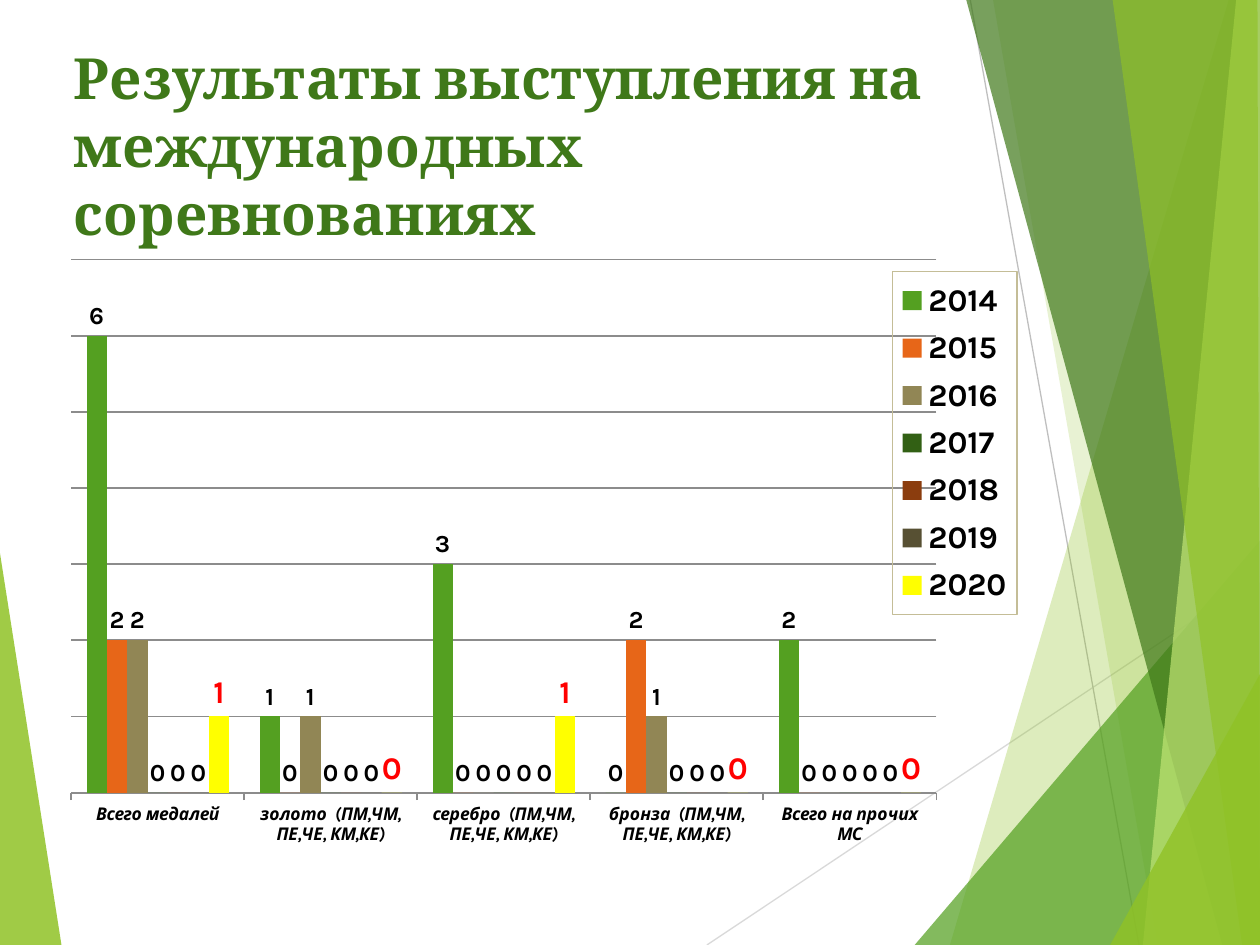
from dataclasses import dataclass

from lxml import etree
from pptx import Presentation
from pptx import util as u
from pptx.chart.data import CategoryChartData
from pptx.dml.color import RGBColor
from pptx.enum import chart as charts
from pptx.enum import shapes, text
from pptx.oxml import parse_xml
from pptx.oxml.ns import nsdecls, qn


@dataclass(frozen=True)
class Theme:
    title_font: str = "Cambria"
    chart_font: str = "Karla"
    title_size: float = 32.4
    legend_size: int = 18
    label_size: int = 14
    category_size: int = 10
    title: str = "3F7819"
    ink: str = "000000"
    highlight: str = "FF0000"
    grid: str = "8C8C8C"
    legend_border: str = "C4BD97"


@dataclass(frozen=True)
class Facet:
    points: tuple
    color: str
    opacity: int


@dataclass(frozen=True)
class Ray:
    start: tuple
    end: tuple
    color: str


@dataclass(frozen=True)
class Year:
    name: str
    medals: tuple
    color: str
    label_color: str = Theme.ink
    label_size: int = Theme.label_size


THEME = Theme()
WIDTH, HEIGHT = 25.4, 19.05
CORNER, TOP_CORNER = (WIDTH, HEIGHT), (WIDTH, 0)

LEFT_FACET = Facet(((0, 11.15), (1.24, HEIGHT), (0, HEIGHT)), "90C226", 85)
RAYS = (
    Ray((14.25, HEIGHT), (WIDTH, 11.61), "D9D9D9"),
    Ray((19.56, 0), (22.96, HEIGHT), "BFBFBF"),
)
RIGHT_FACETS = (
    Facet(((24.77, 0), (19.15, HEIGHT), CORNER, TOP_CORNER), "90C226", 30),
    Facet(((20.02, 0), (23.34, HEIGHT), CORNER, TOP_CORNER), "90C226", 20),
    Facet(((18.44, HEIGHT), (WIDTH, 10.9), CORNER), "54A021", 72),
    Facet(((19.48, 0), (24.64, HEIGHT), CORNER, TOP_CORNER), "3F7819", 70),
    Facet(((24.92, 0), (23.04, HEIGHT), CORNER, TOP_CORNER), "C0E474", 70),
    Facet(((22.43, 0), (25.04, HEIGHT), CORNER, (25.35, 0)), "90C226", 65),
    Facet(((22.38, HEIGHT), (WIDTH, 13.59), CORNER), "90C226", 80),
)

EVENTS = "(ПМ,ЧМ, ПЕ,ЧЕ, КМ,КЕ)"
CATEGORIES = ("Всего медалей", *(f"{medal}  {EVENTS}" for medal in ("золото", "серебро", "бронза")),
              "Всего на прочих МС")
NONE_WON = (0,) * len(CATEGORIES)
YEARS = (
    Year("2014", (6, 1, 3, 0, 2), "54A021"),
    Year("2015", (2, 0, 0, 2, 0), "E76618"),
    Year("2016", (2, 1, 0, 1, 0), "918655"),
    Year("2017", NONE_WON, "326014"),
    Year("2018", NONE_WON, "8B3D0E"),
    Year("2019", NONE_WON, "575033"),
    Year("2020", (1, 0, 1, 0, 0), "FFFF00", THEME.highlight, THEME.legend_size),
)


def style_font(font, color: str, **values) -> None:
    for name, value in values.items():
        setattr(font, name, value)
    font.color.rgb = RGBColor.from_string(color)


def style_line(line, color: str, width: float) -> None:
    line.color.rgb = RGBColor.from_string(color)
    line.width = u.Pt(width)


def draw_facet(slide, facet: Facet) -> None:
    corners = [(u.Cm(x), u.Cm(y)) for x, y in facet.points]
    builder = slide.shapes.build_freeform(*corners[0])
    builder.add_line_segments(corners[1:], close=True)
    shape = builder.convert_to_shape()
    shape.shadow.inherit = False
    shape.line.fill.background()
    shape.fill.solid()
    shape.fill.fore_color.rgb = RGBColor.from_string(facet.color)
    color = next(shape.fill._xPr.iter(qn("a:srgbClr")))
    etree.SubElement(color, qn("a:alpha")).set("val", str(facet.opacity * 1000))


def draw_ray(slide, ray: Ray) -> None:
    connector = slide.shapes.add_connector(
        shapes.MSO_CONNECTOR.STRAIGHT, *(u.Cm(value) for value in ray.start + ray.end))
    style_line(connector.line, ray.color, 0.75)
    etree.SubElement(connector._element.spPr, qn("a:effectLst"))


def add_title(slide) -> None:
    frame = slide.shapes.add_textbox(u.Cm(1.24), u.Cm(0.74), u.Cm(19.25), u.Cm(3.66)).text_frame
    frame.word_wrap = True
    frame.vertical_anchor = text.MSO_ANCHOR.TOP
    run = frame.paragraphs[0].add_run()
    run.text = "Результаты выступления на международных соревнованиях"
    style_font(run.font, THEME.title, name=THEME.title_font, size=u.Pt(THEME.title_size), bold=True)


def set_layout(element, x: float, y: float, w: float, h: float, target: str = "") -> None:
    """Place a chart part by fractions of the chart area."""
    layout = parse_xml(
        f'<c:layout {nsdecls("c")}><c:manualLayout>{target}'
        '<c:xMode val="edge"/><c:yMode val="edge"/>'
        f'<c:x val="{x}"/><c:y val="{y}"/><c:w val="{w}"/><c:h val="{h}"/>'
        '</c:manualLayout></c:layout>')
    for old in element.findall(qn("c:layout")):
        element.remove(old)
    legend_position = element.find(qn("c:legendPos"))
    element.insert(0 if legend_position is None else 1, layout)


def style_axes(chart) -> None:
    category = chart.category_axis
    category.major_tick_mark = charts.XL_TICK_MARK.OUTSIDE
    style_line(category.format.line, THEME.grid, 1)
    style_font(category.tick_labels.font, THEME.ink, name=THEME.chart_font,
               size=u.Pt(THEME.category_size), bold=True, italic=True)
    value = chart.value_axis
    for name, setting in {"minimum_scale": 0, "maximum_scale": 7, "major_unit": 1,
                          "has_major_gridlines": True, "visible": False}.items():
        setattr(value, name, setting)
    style_line(value.major_gridlines.format.line, THEME.grid, 1)


def style_legend(chart) -> None:
    chart.has_legend = True
    legend = chart.legend
    legend.position = charts.XL_LEGEND_POSITION.RIGHT
    legend.include_in_layout = False
    style_font(legend.font, THEME.ink, name=THEME.chart_font,
               size=u.Pt(THEME.legend_size), bold=True)
    set_layout(legend._element, 0.8, 0.06, 0.11, 0.55)
    border = parse_xml(
        f'<c:spPr {nsdecls("c", "a")}><a:noFill/><a:ln w="9525"><a:solidFill>'
        f'<a:srgbClr val="{THEME.legend_border}"/></a:solidFill></a:ln></c:spPr>')
    legend._element.find(qn("c:txPr")).addprevious(border)


def style_series(series, year: Year) -> None:
    series.format.fill.solid()
    series.format.fill.fore_color.rgb = RGBColor.from_string(year.color)
    labels = series.data_labels
    labels.show_value = True
    labels.position = charts.XL_LABEL_POSITION.OUTSIDE_END
    style_font(labels.font, year.label_color, name=THEME.chart_font,
               size=u.Pt(year.label_size), bold=True)


def add_medal_chart(slide) -> None:
    data = CategoryChartData()
    data.categories = CATEGORIES
    for year in YEARS:
        data.add_series(year.name, year.medals)
    chart = slide.shapes.add_chart(
        charts.XL_CHART_TYPE.COLUMN_CLUSTERED,
        u.Cm(-0.3), u.Cm(4.72), u.Cm(22.86), u.Cm(12.57), data).chart
    chart.has_title = False
    style_font(chart.font, THEME.ink, name=THEME.chart_font, size=u.Pt(THEME.legend_size))
    plot = chart.plots[0]
    for name, value in {"gap_width": 150, "overlap": 0, "vary_by_categories": False}.items():
        setattr(plot, name, value)
    set_layout(chart._chartSpace.chart.plotArea, 0.076, 0.041, 0.763, 0.855,
               '<c:layoutTarget val="inner"/>')
    style_axes(chart)
    style_legend(chart)
    for series, year in zip(plot.series, YEARS):
        style_series(series, year)


def main() -> None:
    presentation = Presentation()
    presentation.slide_width, presentation.slide_height = u.Cm(WIDTH), u.Cm(HEIGHT)
    slide = presentation.slides.add_slide(presentation.slide_layouts[6])
    draw_facet(slide, LEFT_FACET)
    for ray in RAYS:
        draw_ray(slide, ray)
    for facet in RIGHT_FACETS:
        draw_facet(slide, facet)
    add_title(slide)
    add_medal_chart(slide)
    presentation.save("out.pptx")


if __name__ == "__main__":
    main()
